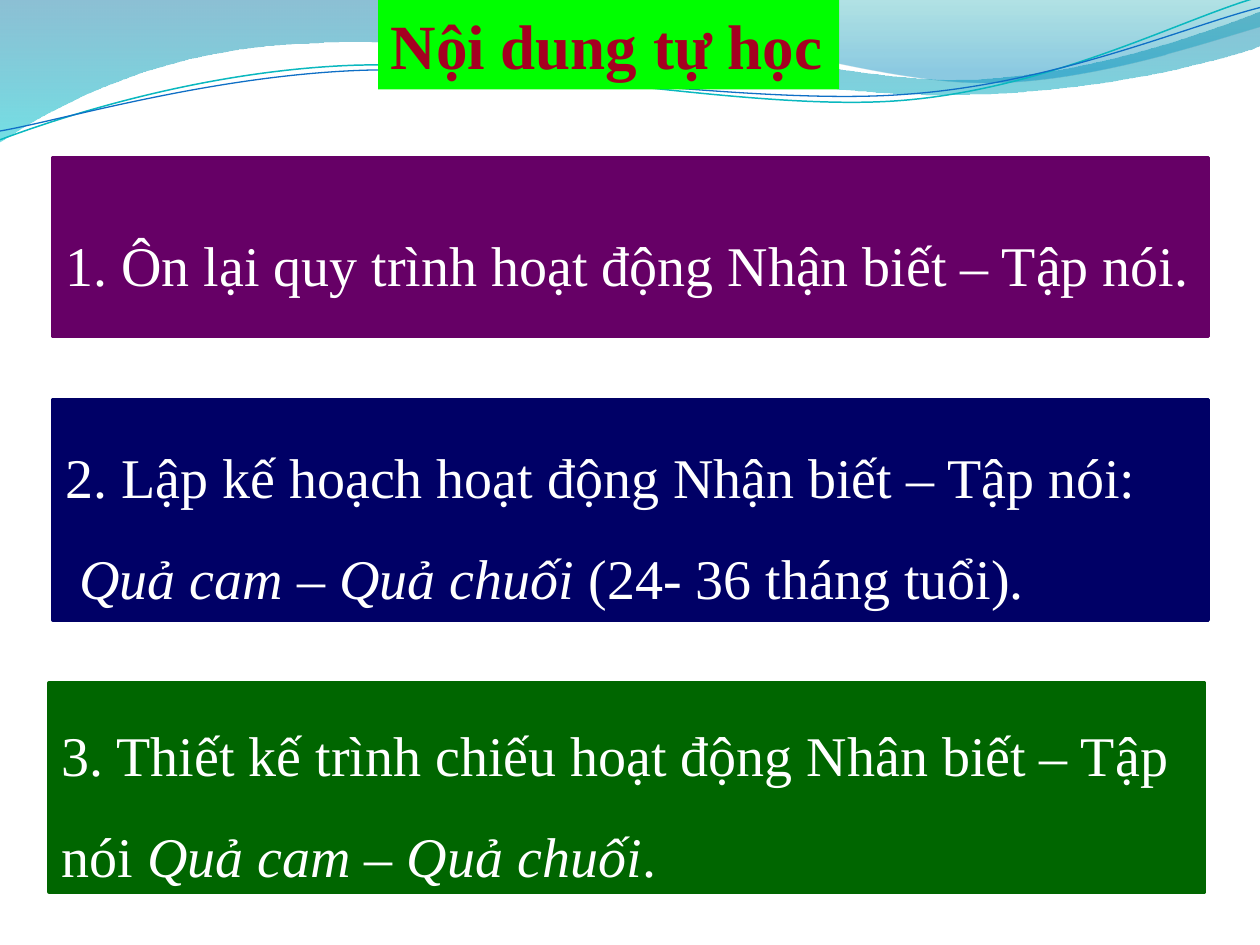
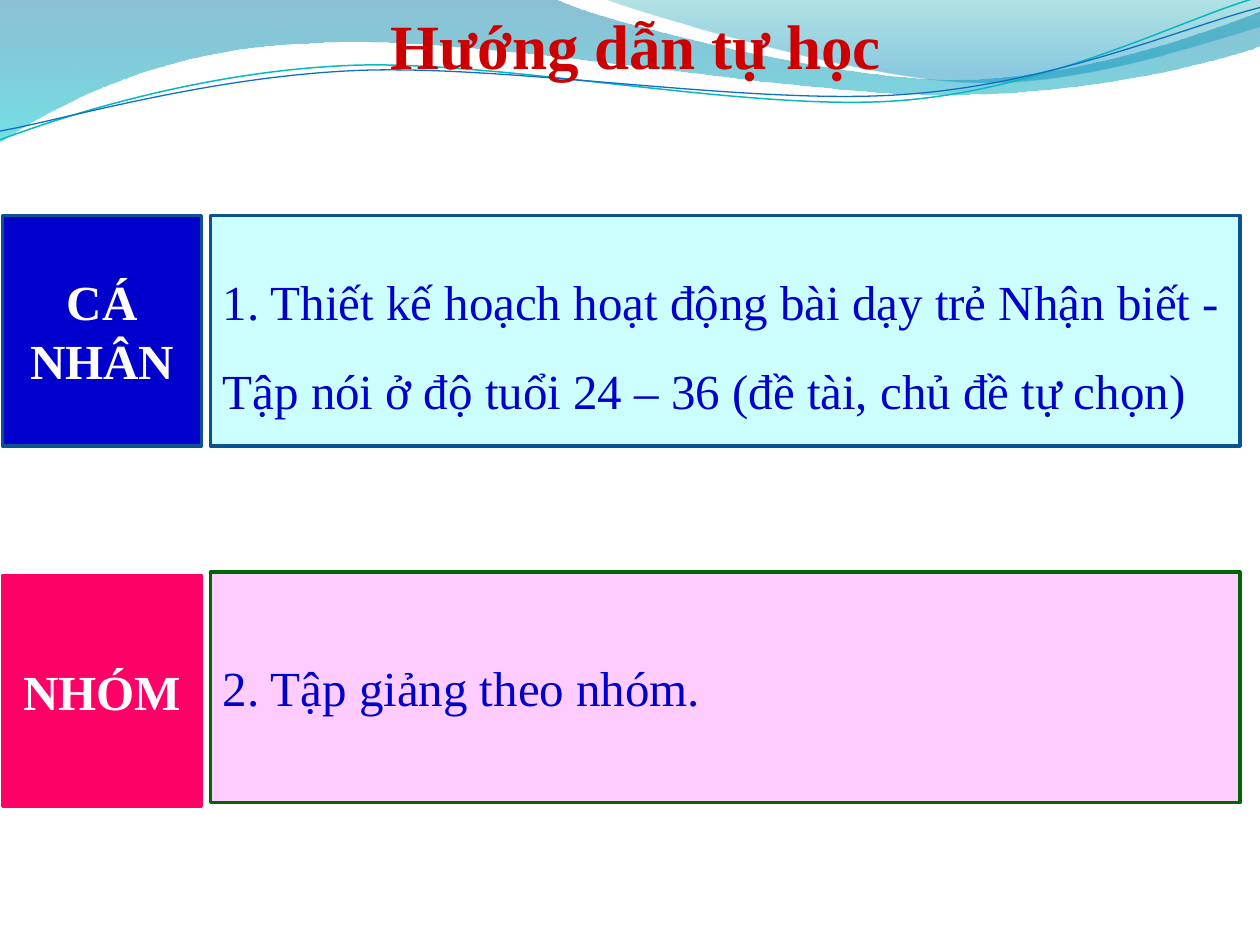
from dataclasses import dataclass

from lxml import etree
from pptx import Presentation
from pptx.dml.color import RGBColor
from pptx.enum.shapes import MSO_SHAPE
from pptx.enum.text import MSO_ANCHOR, MSO_AUTO_SIZE, PP_ALIGN
from pptx.oxml.ns import qn
from pptx.util import Inches, Pt


@dataclass(frozen=True)
class Theme:
    font: str = "Times New Roman"
    title_size: int = 36
    content_size: int = 32
    task_size: int = 28
    border: int = 2
    white: str = "FFFFFF"
    purple: str = "660066"
    navy: str = "000066"
    green: str = "006600"
    lime: str = "00FF00"
    crimson: str = "A50021"
    red: str = "CC0000"
    blue: str = "0000CC"
    steel: str = "0B5292"
    pale_cyan: str = "CCFFFF"
    pale_pink: str = "FFCCFF"
    pink: str = "FF0066"


theme = Theme()
color = RGBColor.from_string


def write(frame, runs, size, text_color, bold=None, align=PP_ALIGN.LEFT, spacing=None):
    """Fill the first paragraph with (text, italic) runs; a None text breaks the line."""
    paragraph = frame.paragraphs[0]
    paragraph.alignment = align
    paragraph.line_spacing = spacing
    font = paragraph.font
    font.name, font.size, font.bold = theme.font, Pt(size), bold
    font.color.rgb = color(text_color)
    for text, italic in runs:
        if text is None:
            paragraph.add_line_break()
        else:
            run = paragraph.add_run()
            run.text = text
            run.font.italic = italic or None


def add_box(slide, left, top, width, height, fill, line, runs, size, text_color, **style):
    shape = slide.shapes.add_shape(
        MSO_SHAPE.RECTANGLE, Inches(left), Inches(top), Inches(width), Inches(height))
    shape.shadow.inherit = False
    shape.fill.solid()
    shape.fill.fore_color.rgb = color(fill)
    shape.line.color.rgb = color(line)
    shape.line.width = Pt(theme.border)
    shape.text_frame.word_wrap = True
    shape.text_frame.vertical_anchor = MSO_ANCHOR.MIDDLE
    write(shape.text_frame, runs, size, text_color, **style)


presentation = Presentation()
presentation.slide_width, presentation.slide_height = Inches(10), Inches(7.5)
layout = presentation.slide_layouts[5]
content_slide, guide_slide = [presentation.slides.add_slide(layout) for _ in range(2)]

# Waves: a start point, then segments of one end point (straight) or three points (Bézier).
# Bands have gradient stops (position, colour, opacity %), strokes a colour and width.
waves = [
    ((0, 0), [
        [(4.4, -0.01)],
        [(4.76, 0.17), (6.64, 0.63), (7.58, 0.63)],
        [(8.53, 0.63), (9.58, 0.26), (10, 0.09)],
        [(10.01, 0.36)],
        [(9.83, 0.44), (8.7, 0.76), (7.46, 0.75)],
        [(6.22, 0.75), (3.82, 0.28), (2.57, 0.34)],
        [(1.29, 0.36), (0.46, 0.83), (-0.01, 1.13)],
    ], [(0, "0074A1", 45), (1, "00C6CF", 55)], None),
    ((4.79, -0.01), [
        [(5.09, 0.11), (6.82, 0.62), (7.69, 0.65)],
        [(8.56, 0.69), (9.61, 0.32), (10, 0.21)],
        [(10, 0)],
    ], [(0, "00A1A9", 30), (0.8, "008BBF", 45)], None),
    ((0, 1.11), [
        [(0.48, 0.93), (1.58, 0.57), (2.77, 0.52)],
        [(3.95, 0.47), (5.93, 0.89), (7.13, 0.8)],
        [(8.33, 0.71), (9.38, 0.15), (9.98, -0.02)],
    ], None, ("0AB8BF", 0.85)),
    ((0, 1.04), [
        [(0.47, 0.96), (1.64, 0.61), (2.83, 0.56)],
        [(4.03, 0.51), (5.97, 0.84), (7.17, 0.75)],
        [(8.36, 0.67), (9.41, 0.21), (10, 0.06)],
    ], None, ("0F6FC6", 0.75)),
]
for index, (start, segments, stops, stroke) in enumerate(waves):
    outline = [(Inches(x), Inches(y)) for segment in segments for x, y in segment]
    builder = content_slide.shapes.build_freeform(Inches(start[0]), Inches(start[1]))
    builder.add_line_segments(outline, close=stops is not None)
    wave = builder.convert_to_shape()
    wave.shadow.inherit = False

    # Three straight steps become one Bézier curve.
    steps = iter(list(wave.element.iter(qn("a:lnTo"))))
    for segment in segments:
        nodes = [next(steps) for _ in segment]
        if len(nodes) == 3:
            curve = etree.Element(qn("a:cubicBezTo"))
            nodes[0].addprevious(curve)
            for node in nodes:
                curve.append(node[0])
                node.getparent().remove(node)

    if stops:
        wave.line.fill.background()
        wave.fill.gradient()
        wave.fill.gradient_angle = 270
        for stop, (position, stop_color, _) in zip(wave.fill.gradient_stops, stops):
            stop.position = position
            stop.color.rgb = color(stop_color)
        for node, (_, _, opacity) in zip(wave.element.spPr.iter(qn("a:srgbClr")), stops):
            etree.SubElement(node, qn("a:alpha")).set("val", str(opacity * 1000))
    else:
        wave.fill.background()
        wave.line.color.rgb = color(stroke[0])
        wave.line.width = Pt(stroke[1])
    # The layout carries the waves, behind its placeholders.
    wave.element.nvSpPr.cNvPr.set("id", str(100 + index))
    layout.shapes.element.insert(2 + index, wave.element)

for slide, text, width, text_color, fill in [
    (content_slide, "Nội dung tự học", 3.66, theme.crimson, theme.lime),
    (guide_slide, "Hướng dẫn tự học", 4.13, theme.red, None),
]:
    title = slide.shapes.title
    title.left, title.top = Inches(3), Inches(0)
    title.width, title.height = Inches(width), Inches(0.71)
    if fill:
        title.fill.solid()
        title.fill.fore_color.rgb = color(fill)
    title.text_frame.word_wrap = False
    title.text_frame.auto_size = MSO_AUTO_SIZE.NONE
    title.text_frame.vertical_anchor = MSO_ANCHOR.TOP
    write(title.text_frame, [(text, False)], theme.title_size, text_color, bold=True)

# Slide 1: three content bars
fruits = ("Quả cam – Quả chuối", True)
for left, top, height, fill, runs in [
    (0.42, 1.25, 1.42, theme.purple,
     [("1. Ôn lại quy trình hoạt động Nhận biết – Tập nói.", False)]),
    (0.42, 3.17, 1.75, theme.navy,
     [("2. Lập kế hoạch hoạt động Nhận biết – Tập nói:", False), (None, False),
      (" ", False), fruits, (" (24- 36 tháng tuổi).", False)]),
    (0.39, 5.42, 1.66, theme.green,
     [("3. Thiết kế trình chiếu hoạt động Nhân biết – Tập nói ", False),
      fruits, (".", False)]),
]:
    add_box(content_slide, left, top, 9.17, height, fill, fill, runs,
            theme.content_size, theme.white, spacing=1.5)

# Slide 2: a label and a task on each row
ROW_HEIGHT = 1.83
for label, label_top, label_fill, label_line, task, task_top, task_fill, task_line, spacing in [
    ("CÁ NHÂN", 1.71, theme.blue, theme.steel,
     "1. Thiết kế hoạch hoạt động bài dạy trẻ Nhận biết - Tập nói ở độ tuổi 24 – 36 "
     "(đề tài, chủ đề tự chọn)", 1.71, theme.pale_cyan, theme.steel, 1.5),
    ("NHÓM", 4.57, theme.pink, theme.pink,
     "2. Tập giảng theo nhóm.", 4.54, theme.pale_pink, theme.green, None),
]:
    add_box(guide_slide, 1.67, task_top, 8.17, ROW_HEIGHT, task_fill, task_line,
            [(task, False)], theme.task_size, theme.blue, spacing=spacing)
    add_box(guide_slide, 0.02, label_top, 1.58, ROW_HEIGHT, label_fill, label_line,
            [(label, False)], theme.task_size, theme.white, bold=True, align=PP_ALIGN.CENTER)

presentation.save("out.pptx")
